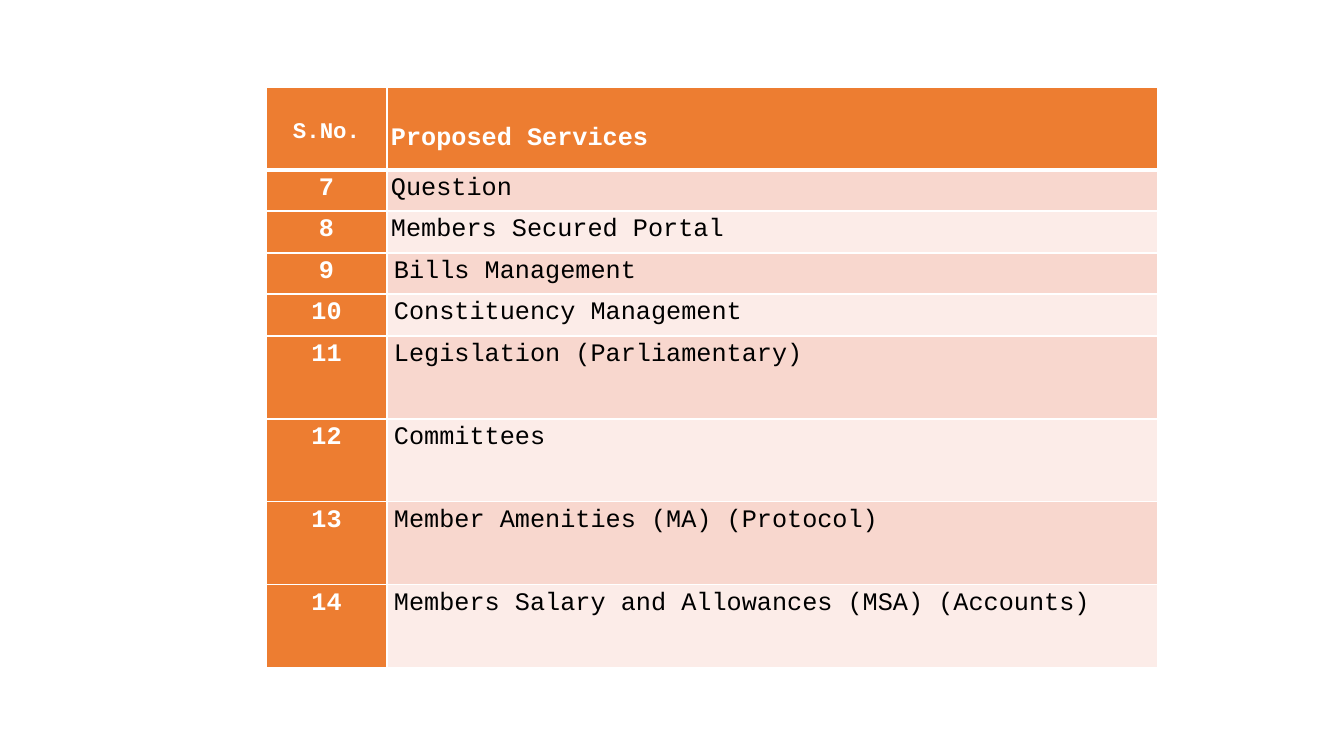
from lxml import etree
from pptx import Presentation, util as u
from pptx.dml.color import RGBColor
from pptx.enum import text
from pptx.oxml.ns import qn

HEADER = ("S.No.", "Proposed Services")
SERVICES = [
    "Question",
    "Members Secured Portal",
    "Bills Management",
    "Constituency Management",
    "Legislation (Parliamentary)",
    "Committees",
    "Member Amenities (MA) (Protocol)",
    "Members Salary and Allowances (MSA) (Accounts)",
]
FIRST_NUMBER = 7
LEFT, TOP = 266, 87
COL_WIDTHS = [121, 771]
ROW_HEIGHTS = [83, 41, 42, 41, 42, 83, 83, 83, 83]
ORANGE, WHITE, BLACK = "ED7D31", "FFFFFF", "000000"
BANDS = ["F8D7CE", "FCECE8"]
NARROW_INSET_ROWS = 3
HEADER_TOPS = [29, 33]


def px(n):
    return u.Emu(round(n * 914400 / 100.8))


def color(value):
    return RGBColor.from_string(value)


def set_borders(cell, widths):
    """Draw white borders, with widths in points for left, right, top, bottom."""
    tc_pr = cell._tc.get_or_add_tcPr()
    for i, (side, width) in enumerate(zip("LRTB", widths)):
        ln = etree.Element(qn(f"a:ln{side}"), w=str(u.Pt(width)))
        fill = etree.SubElement(ln, qn("a:solidFill"))
        etree.SubElement(fill, qn("a:srgbClr"), val=WHITE)
        tc_pr.insert(i, ln)


def fill_cell(cell, row, col, words):
    heading = row == 0 or col == 0
    inset = px(4 if row < NARROW_INSET_ROWS else 7)
    layout = {
        "margin_left": inset,
        "margin_right": inset,
        "margin_top": px(HEADER_TOPS[col] if row == 0 else 0),
        "margin_bottom": 0,
        "vertical_anchor": text.MSO_ANCHOR.TOP,
    }
    for name, value in layout.items():
        setattr(cell, name, value)
    cell.fill.solid()
    cell.fill.fore_color.rgb = color(ORANGE if heading else BANDS[(row - 1) % 2])
    set_borders(cell, (1, 1, 3 if row == 1 else 1, 3 if row == 0 else 1))

    p = cell.text_frame.paragraphs[0]
    p.alignment = text.PP_ALIGN.LEFT if col else text.PP_ALIGN.CENTER
    p.line_spacing = 1.15
    r = p.add_run()
    r.text = words
    size = 16 if (row, col) == (0, 0) else 18
    for name, value in {"name": "Courier New", "size": u.Pt(size), "bold": heading}.items():
        setattr(r.font, name, value)
    r.font.color.rgb = color(WHITE if heading else BLACK)


def main():
    prs = Presentation()
    prs.slide_width, prs.slide_height = px(1344), px(756)
    s = prs.slides.add_slide(prs.slide_layouts[6])

    rows = [HEADER] + [(str(n), name) for n, name in enumerate(SERVICES, FIRST_NUMBER)]
    table = s.shapes.add_table(
        len(rows), len(HEADER), px(LEFT), px(TOP), px(sum(COL_WIDTHS)), px(sum(ROW_HEIGHTS))
    ).table
    table.first_col = True
    for column, width in zip(table.columns, COL_WIDTHS):
        column.width = px(width)
    for table_row, height in zip(table.rows, ROW_HEIGHTS):
        table_row.height = px(height)
    for i, row in enumerate(rows):
        for j, words in enumerate(row):
            fill_cell(table.cell(i, j), i, j, words)
    prs.save("out.pptx")


if __name__ == "__main__":
    main()
